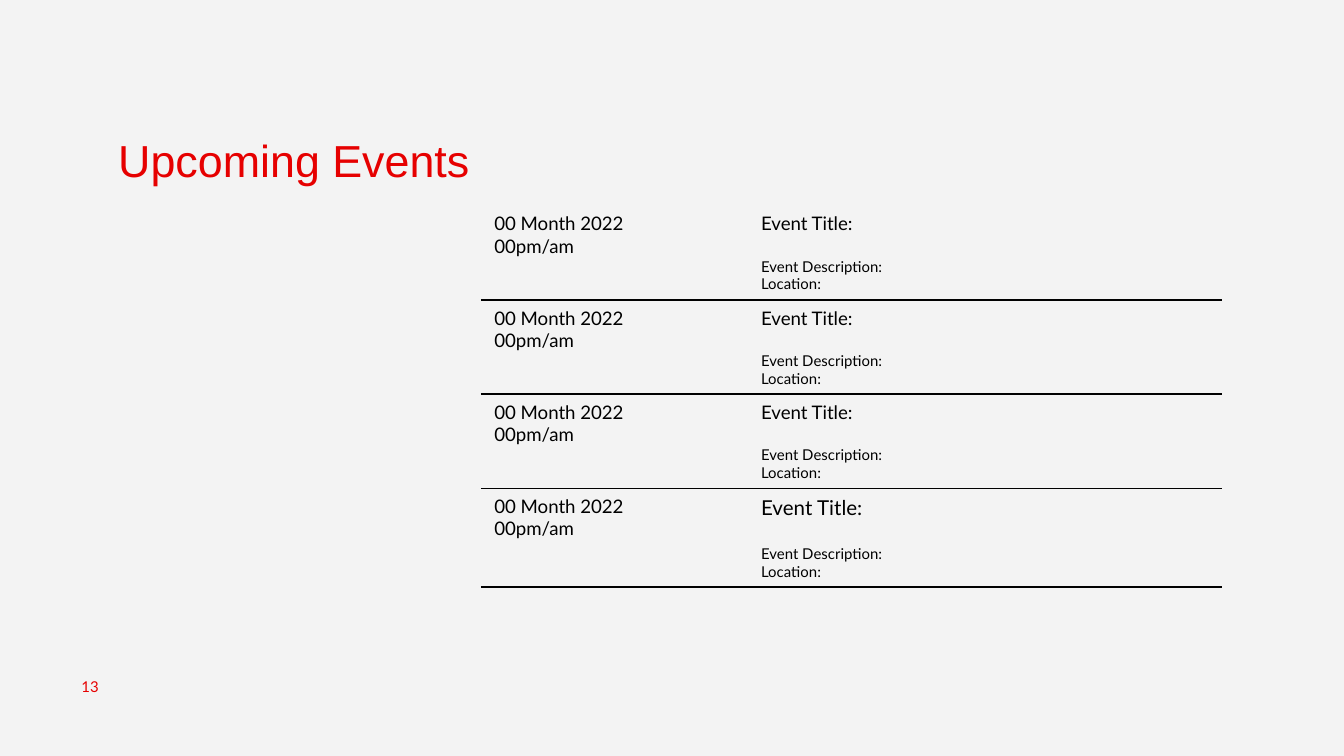
from lxml import etree
from pptx import Presentation
from pptx import util as u
from pptx.dml.color import RGBColor
from pptx.enum import text
from pptx.oxml import ns

RED = RGBColor(0xE6, 0x00, 0x00)
BLACK = RGBColor(0x00, 0x00, 0x00)
PALE_GREY = RGBColor(0xF3, 0xF3, 0xF3)
NO_GRID_STYLE = "{2D5ABB26-0587-4C30-8999-92F81FD0307C}"

TITLE_SIZES = [10, 10, 10, 11]
ROW_HEIGHTS = [1.78, 1.78, 1.78, 1.86]
DATE_SHARE = 0.36


def add_run(paragraph, words, size, color, font_name="Lato"):
    run = paragraph.add_run()
    run.text = words
    run.font.name = font_name
    run.font.size = u.Pt(size)
    run.font.color.rgb = color


def fill_cell(cell, lines):
    """Write (words, size, space before) lines, one paragraph each."""
    frame = cell.text_frame
    for index, (words, size, gap) in enumerate(lines):
        paragraph = frame.add_paragraph() if index else frame.paragraphs[0]
        if gap:
            paragraph.space_before = u.Pt(gap)
        add_run(paragraph, words, size, BLACK)


def rule_below(cell):
    """Leave the cell clear, with a black line under it."""
    cell.fill.background()
    properties = cell._tc.get_or_add_tcPr()
    line = etree.Element(ns.qn("a:lnB"), w=str(u.Pt(1)))
    solid = etree.SubElement(line, ns.qn("a:solidFill"))
    etree.SubElement(solid, ns.qn("a:srgbClr"), val=str(BLACK))
    properties.insert(0, line)


def place_title(slide, left, top, width, height):
    title = slide.shapes.title
    title.left, title.top, title.width, title.height = left, top, width, height
    frame = title.text_frame
    frame.word_wrap = True
    frame.auto_size = text.MSO_AUTO_SIZE.NONE
    frame.vertical_anchor = text.MSO_ANCHOR.MIDDLE
    paragraph = frame.paragraphs[0]
    paragraph.alignment = text.PP_ALIGN.LEFT
    paragraph.line_spacing = 0.9
    add_run(paragraph, "Upcoming Events", 24, RED, "Arial")


def place_events(slide, left, top, width):
    height = u.Cm(sum(ROW_HEIGHTS))
    frame = slide.shapes.add_table(len(ROW_HEIGHTS), 2, left, top, width, height)
    table = frame.table
    table.first_row = table.horz_banding = False
    table._tbl.tblPr.find(ns.qn("a:tableStyleId")).text = NO_GRID_STYLE
    table.columns[0].width = int(width * DATE_SHARE)
    table.columns[1].width = width - table.columns[0].width
    for index, (row_height, title_size) in enumerate(zip(ROW_HEIGHTS, TITLE_SIZES)):
        row = table.rows[index]
        row.height = u.Cm(row_height)
        date_cell, event_cell = row.cells
        fill_cell(date_cell, [("00 Month 2022", 10, 0), ("00pm/am", 10, 0)])
        fill_cell(event_cell, [
            ("Event Title:", title_size, 0),
            ("Event Description:", 8, title_size * 1.2),
            ("Location:", 8, 0),
        ])
        for cell in row.cells:
            rule_below(cell)


def place_page_number(slide, left, top, width, height):
    box = slide.shapes.add_textbox(left, top, width, height)
    frame = box.text_frame
    frame.word_wrap = True
    frame.vertical_anchor = text.MSO_ANCHOR.MIDDLE
    paragraph = frame.paragraphs[0]
    paragraph.alignment = text.PP_ALIGN.CENTER
    add_run(paragraph, "13", 8, RED)


def main():
    presentation = Presentation()
    presentation.slide_width = u.Cm(25.4)
    presentation.slide_height = u.Cm(14.29)
    slide = presentation.slides.add_slide(presentation.slide_layouts[5])
    slide.background.fill.solid()
    slide.background.fill.fore_color.rgb = PALE_GREY

    place_page_number(slide, u.Cm(0.89), u.Cm(12.6), u.Cm(1.63), u.Cm(0.76))
    place_title(slide, u.Cm(1.98), u.Cm(1.7), u.Cm(7.57), u.Cm(2.77))
    place_events(slide, u.Cm(9.09), u.Cm(3.89), u.Cm(14))
    presentation.save("out.pptx")


if __name__ == "__main__":
    main()
